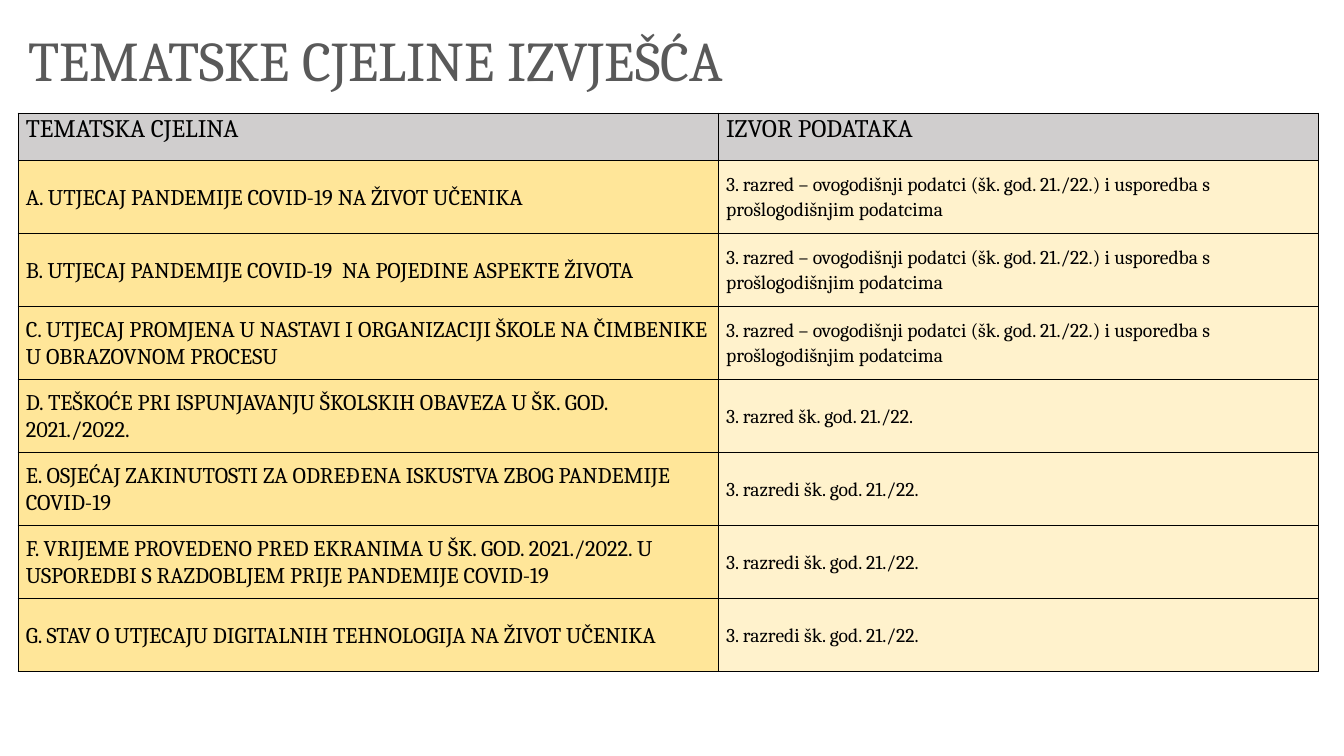
"""Build a slide that lists the report's thematic sections and their data sources."""
from dataclasses import dataclass

from lxml import etree
from pptx import Presentation
from pptx.dml.color import RGBColor
from pptx.enum.text import MSO_ANCHOR, MSO_AUTO_SIZE
from pptx.oxml.ns import qn
from pptx.slide import Slide
from pptx.table import _Cell
from pptx.text.text import _Paragraph
from pptx.util import Cm, Pt

TOP, MIDDLE = MSO_ANCHOR.TOP, MSO_ANCHOR.MIDDLE
FIT_SHAPE = MSO_AUTO_SIZE.SHAPE_TO_FIT_TEXT


@dataclass(frozen=True)
class Theme:
    """Colours, font and type sizes of the slide."""
    font: str = "Cambria"
    title_color: str = "595959"
    ink: str = "000000"
    header_fill: str = "D0CECE"
    section_fill: str = "FFE699"
    source_fill: str = "FFF2CC"
    title_size: int = 40
    header_size: int = 18
    section_size: int = 16
    source_size: int = 14


@dataclass(frozen=True)
class CellStyle:
    """Look of one kind of table cell."""
    fill: str
    size: int
    anchor: MSO_ANCHOR


@dataclass(frozen=True)
class Section:
    """A thematic section and the source of its data."""
    title: str
    source: str


THEME = Theme()
HEADER = CellStyle(THEME.header_fill, THEME.header_size, TOP)
SECTION = CellStyle(THEME.section_fill, THEME.section_size, MIDDLE)
SOURCE = CellStyle(THEME.source_fill, THEME.source_size, MIDDLE)

COMPARISON = ("3. razred – ovogodišnji podatci (šk. god. 21./22.) "
              "i usporedba s prošlogodišnjim podatcima")
THIRD_GRADE = "3. razred šk. god. 21./22."
THIRD_GRADES = "3. razredi šk. god. 21./22."
HEADINGS = Section("TEMATSKA CJELINA", "IZVOR PODATAKA")
SECTIONS = [
    Section("A. UTJECAJ PANDEMIJE COVID-19 NA ŽIVOT UČENIKA", COMPARISON),
    Section("B. UTJECAJ PANDEMIJE COVID-19  NA POJEDINE ASPEKTE ŽIVOTA", COMPARISON),
    Section("C. UTJECAJ PROMJENA U NASTAVI I ORGANIZACIJI ŠKOLE "
            "NA ČIMBENIKE U OBRAZOVNOM PROCESU", COMPARISON),
    Section("D. TEŠKOĆE PRI ISPUNJAVANJU ŠKOLSKIH OBAVEZA U ŠK. GOD. 2021./2022.",
            THIRD_GRADE),
    Section("E. OSJEĆAJ ZAKINUTOSTI ZA ODREĐENA ISKUSTVA ZBOG PANDEMIJE COVID-19",
            THIRD_GRADES),
    Section("F. VRIJEME PROVEDENO PRED EKRANIMA U ŠK. GOD. 2021./2022. "
            "U USPOREDBI S RAZDOBLJEM PRIJE PANDEMIJE COVID-19", THIRD_GRADES),
    Section("G. STAV O UTJECAJU DIGITALNIH TEHNOLOGIJA NA ŽIVOT UČENIKA", THIRD_GRADES),
]

LEFT = Cm(0.46)
TABLE_TOP = Cm(2.85)
COLUMN_WIDTHS = (Cm(17.65), Cm(15.11))
HEADER_HEIGHT, SECTION_HEIGHT = Cm(1.19), Cm(1.84)
CELL_MARGIN = Cm(0.19)
BORDER_WIDTH = Pt(1)


def set_font(paragraph: _Paragraph, size: int, color: str) -> None:
    """Apply the theme font to a paragraph."""
    paragraph.font.name = THEME.font
    paragraph.font.size = Pt(size)
    paragraph.font.color.rgb = RGBColor.from_string(color)


def add_borders(cell: _Cell) -> None:
    """Draw a thin line along each side of a cell."""
    properties = cell._tc.get_or_add_tcPr()
    for side in ("a:lnL", "a:lnR", "a:lnT", "a:lnB"):
        line = etree.SubElement(properties, qn(side), w=str(BORDER_WIDTH))
        fill = etree.SubElement(line, qn("a:solidFill"))
        etree.SubElement(fill, qn("a:srgbClr"), val=THEME.ink)


def fill_cell(cell: _Cell, text: str, style: CellStyle) -> None:
    """Write the text of a cell and style it."""
    cell.text = text
    cell.vertical_anchor = style.anchor
    cell.margin_left = cell.margin_right = CELL_MARGIN
    cell.margin_top = cell.margin_bottom = 0
    paragraph = cell.text_frame.paragraphs[0]
    paragraph.line_spacing = 1.07
    set_font(paragraph, style.size, THEME.ink)
    add_borders(cell)
    cell.fill.solid()
    cell.fill.fore_color.rgb = RGBColor.from_string(style.fill)


def add_sections(slide: Slide) -> None:
    """Add the table of sections under its heading row."""
    rows = [HEADINGS, *SECTIONS]
    heights = [HEADER_HEIGHT] + [SECTION_HEIGHT] * len(SECTIONS)
    table = slide.shapes.add_table(len(rows), len(COLUMN_WIDTHS), LEFT, TABLE_TOP,
                                   sum(COLUMN_WIDTHS), sum(heights)).table
    for column, width in zip(table.columns, COLUMN_WIDTHS):
        column.width = width
    for index, (section, height) in enumerate(zip(rows, heights)):
        table.rows[index].height = height
        title_style, source_style = (SECTION, SOURCE) if index else (HEADER, HEADER)
        fill_cell(table.cell(index, 0), section.title, title_style)
        fill_cell(table.cell(index, 1), section.source, source_style)


def add_title(slide: Slide) -> None:
    """Add the slide title."""
    frame = slide.shapes.add_textbox(LEFT, Cm(0.53), Cm(19.51), Cm(1.96)).text_frame
    frame.word_wrap = False
    frame.auto_size = FIT_SHAPE
    frame.text = "TEMATSKE CJELINE IZVJEŠĆA"
    set_font(frame.paragraphs[0], THEME.title_size, THEME.title_color)


def main() -> None:
    """Build and save the presentation."""
    presentation = Presentation()
    presentation.slide_width, presentation.slide_height = Cm(33.87), Cm(19.05)
    slide = presentation.slides.add_slide(presentation.slide_layouts[6])
    add_sections(slide)
    add_title(slide)
    presentation.save("out.pptx")


if __name__ == "__main__":
    main()
